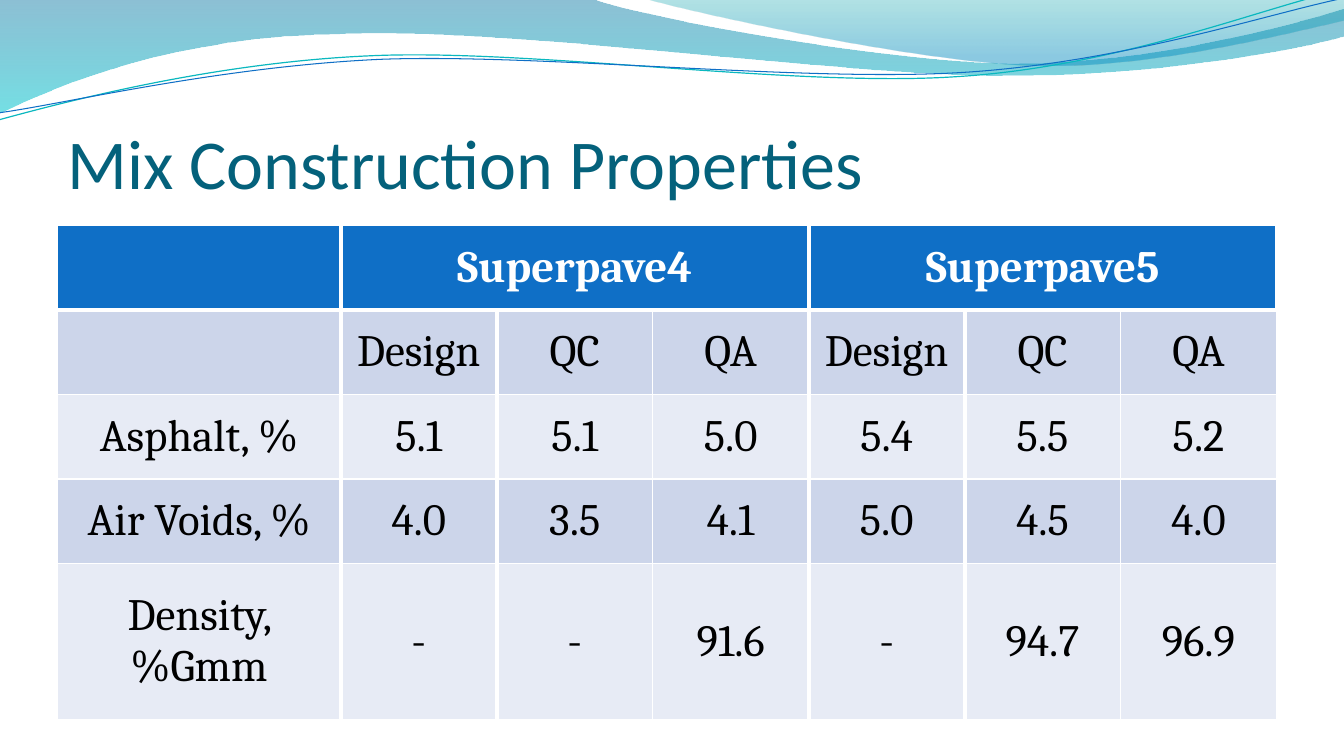
from dataclasses import dataclass

from lxml import etree
from pptx import Presentation
from pptx.dml.color import RGBColor
from pptx.enum.text import MSO_ANCHOR, PP_ALIGN
from pptx.oxml.ns import qn
from pptx.util import Cm, Pt

CENTER = PP_ALIGN.CENTER
MIDDLE = MSO_ANCHOR.MIDDLE
BOTTOM = MSO_ANCHOR.BOTTOM

BLUE, WHITE, BLACK = "0F6FC6", "FFFFFF", "000000"
BANDS = ("CCD5EA", "E7EBF5")
STRAND_ROTATION = 357.3
THIN, THICK = 1, 3

Point = tuple[float, float]
Segment = tuple[Point, ...]  # one point: straight line; three points: cubic curve


@dataclass
class Stop:
    position: float
    color: str
    opacity: int


@dataclass
class Wave:
    start: Point
    segments: list[Segment]
    stops: tuple[Stop, ...]


@dataclass
class Strand:
    start: Point
    segments: list[Segment]
    color: str
    width: float


WAVES = [
    Wave((0, 0), [
        ((14.91, -0.03),),
        ((16.1, 0.43), (22.48, 1.6), (25.68, 1.6)),
        ((28.91, 1.6), (32.46, 0.66), (33.86, 0.23)),
        ((33.91, 0.91),),
        ((33.3, 1.12), (29.46, 1.93), (25.25, 1.91)),
        ((21.06, 1.91), (12.93, 0.71), (8.71, 0.86)),
        ((4.37, 0.91), (1.55, 2.11), (-0.03, 2.87)),
    ], (Stop(0, "0074A1", 45), Stop(1, "00C6CF", 55))),
    Wave((16.23, -0.03), [
        ((17.25, 0.28), (23.09, 1.57), (26.04, 1.65)),
        ((28.98, 1.75), (32.56, 0.81), (33.86, 0.53)),
        ((33.86, 0),),
    ], (Stop(0, "00A1A9", 30), Stop(0.8, "008BBF", 45))),
]
# Strands are laid out level, then rotated
STRANDS = [
    Strand((-0.08, 2.22), [
        ((1.59, 1.85), (5.37, 1.03), (9.38, 1.05)),
        ((13.41, 1.06), (20.03, 2.36), (24.1, 2.27)),
        ((28.17, 2.21), (31.84, 0.9), (33.87, 0.55)),
    ], "0AB8BF", 0.85),
    Strand((-0.04, 2.04), [
        ((1.56, 1.9), (5.54, 1.14), (9.61, 1.15)),
        ((13.65, 1.19), (20.19, 2.23), (24.24, 2.17)),
        ((28.3, 2.11), (31.92, 1.07), (33.93, 0.75)),
    ], BLUE, 0.75),
]

ROWS = [
    ["", "Superpave4", "", "", "Superpave5", "", ""],
    ["", "Design", "QC", "QA", "Design", "QC", "QA"],
    ["Asphalt, %", "5.1", "5.1", "5.0", "5.4", "5.5", "5.2"],
    ["Air Voids, %", "4.0", "3.5", "4.1", "5.0", "4.5", "4.0"],
    ["Density, %Gmm", "-", "-", "91.6", "-", "94.7", "96.9"],
]
COL_WIDTHS = [7.14] + [3.93] * 6
ROW_HEIGHTS = [2.13] * 4 + [3.93]
GROUP_STARTS = (1, 4)
THICK_EDGES = (1, 2, 4, 5)  # columns with a thick line on their left


def rgb(color: str) -> RGBColor:
    return RGBColor.from_string(color)


def add_outline(s, item: Wave | Strand, close: bool):
    """Build the outline, then turn each run of three points into a curve."""
    builder = s.shapes.build_freeform(*(Cm(v) for v in item.start))
    points = [(Cm(x), Cm(y)) for segment in item.segments for x, y in segment]
    builder.add_line_segments(points, close=close)
    sp = builder.convert_to_shape()
    sp.shadow.inherit = False
    lines = iter(list(sp._element.iter(qn("a:lnTo"))))
    for segment in item.segments:
        group = [next(lines) for _ in segment]
        if len(group) == 3:
            curve = etree.Element(qn("a:cubicBezTo"))
            group[0].addprevious(curve)
            for line in group:
                curve.append(line[0])
                line.getparent().remove(line)
    return sp


def add_wave(s, wave: Wave) -> None:
    sp = add_outline(s, wave, close=True)
    sp.line.fill.background()
    sp.fill.gradient()
    sp.fill.gradient_angle = 270
    for target, stop in zip(sp.fill.gradient_stops, wave.stops):
        target.position = stop.position
        target.color.rgb = rgb(stop.color)
    for clr, stop in zip(sp._element.spPr.iter(qn("a:srgbClr")), wave.stops):
        etree.SubElement(clr, qn("a:alpha"), val=str(stop.opacity * 1000))


def add_strand(s, strand: Strand) -> None:
    sp = add_outline(s, strand, close=False)
    sp.rotation = STRAND_ROTATION
    sp.fill.background()
    sp.line.color.rgb = rgb(strand.color)
    sp.line.width = Pt(strand.width)


def set_font(p, name: str, size: float, color: str, bold: bool = False) -> None:
    p.font.name = name
    p.font.size = Pt(size)
    p.font.bold = bold
    p.font.color.rgb = rgb(color)


def add_title(s, text: str) -> None:
    tf = s.shapes.add_textbox(Cm(1.7), Cm(1.96), Cm(30.48), Cm(3.18)).text_frame
    tf.word_wrap = True
    tf.vertical_anchor = BOTTOM
    tf.margin_left = tf.margin_right = tf.margin_bottom = 0
    p = tf.paragraphs[0]
    p.text = text
    set_font(p, "Calibri", 50, "04617B")


def set_borders(cell, widths: dict[str, int]) -> None:
    tc_pr = cell._tc.get_or_add_tcPr()
    for i, (side, width) in enumerate(widths.items()):
        ln = etree.Element(qn(f"a:ln{side}"), w=str(Pt(width)))
        fill = etree.SubElement(ln, qn("a:solidFill"))
        etree.SubElement(fill, qn("a:srgbClr"), val=WHITE)
        tc_pr.insert(i, ln)


def add_properties_table(s) -> None:
    table = s.shapes.add_table(
        len(ROWS), len(COL_WIDTHS), Cm(1.45), Cm(5.68),
        Cm(sum(COL_WIDTHS)), Cm(sum(ROW_HEIGHTS))).table
    table.first_row = table.horz_banding = False
    for column, width in zip(table.columns, COL_WIDTHS):
        column.width = Cm(width)
    for row, height in zip(table.rows, ROW_HEIGHTS):
        row.height = Cm(height)
    for r, texts in enumerate(ROWS):
        header = r == 0
        for c, text in enumerate(texts):
            cell = table.cell(r, c)
            cell.fill.solid()
            cell.fill.fore_color.rgb = rgb(BLUE if header else BANDS[(r - 1) % 2])
            cell.vertical_anchor = MIDDLE
            set_borders(cell, {
                "L": THICK if c in THICK_EDGES else THIN,
                "R": THICK if c + 1 in THICK_EDGES else THIN,
                "T": THICK if r == 1 else THIN,
                "B": THICK if header else THIN,
            })
            p = cell.text_frame.paragraphs[0]
            p.text = text
            p.alignment = CENTER
            set_font(p, "Cambria", 32, WHITE if header else BLACK, header)
    for c in GROUP_STARTS:
        table.cell(0, c).merge(table.cell(0, c + 2))


def main() -> None:
    prs = Presentation()
    prs.slide_width, prs.slide_height = Cm(33.87), Cm(19.05)
    s = prs.slides.add_slide(prs.slide_layouts[6])
    # Waves across the top
    for wave in WAVES:
        add_wave(s, wave)
    for strand in STRANDS:
        add_strand(s, strand)
    # Title and table
    add_title(s, "Mix Construction Properties")
    add_properties_table(s)
    prs.save("out.pptx")


if __name__ == "__main__":
    main()
